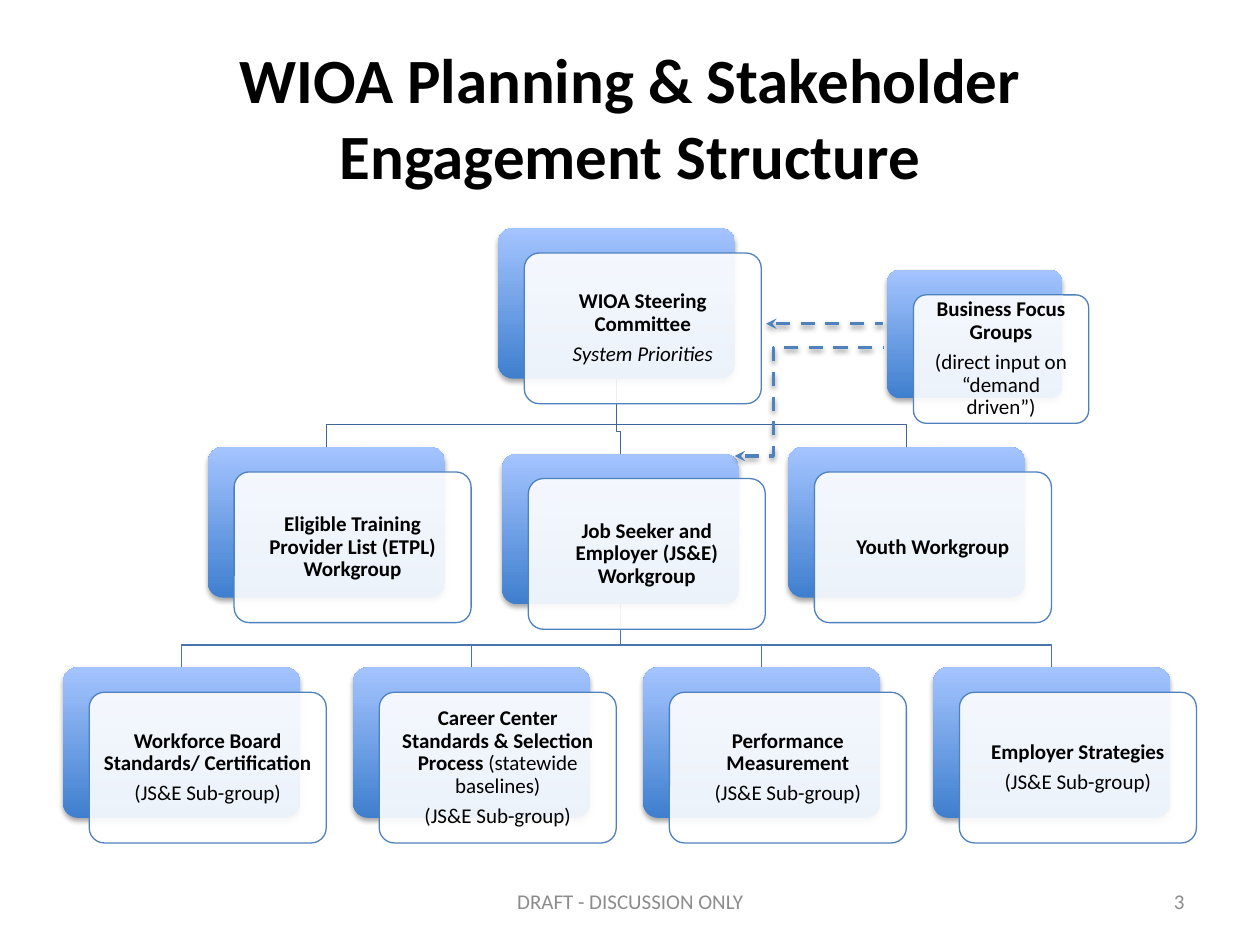
"""Build the WIOA planning and stakeholder engagement structure slide."""
import pptx
import pptx.dml.color
import pptx.enum.dml
import pptx.enum.shapes
import pptx.enum.text
import pptx.oxml
import pptx.oxml.ns
import pptx.util

Pt = pptx.util.Pt
RGBColor = pptx.dml.color.RGBColor
ALIGN = pptx.enum.text.PP_ALIGN
SHAPE = pptx.enum.shapes.MSO_SHAPE
CONNECTOR = pptx.enum.shapes.MSO_CONNECTOR
NAMESPACE = pptx.oxml.ns.nsdecls("a")

BLACK = RGBColor(0x00, 0x00, 0x00)
WHITE = RGBColor(0xFF, 0xFF, 0xFF)
GRAY = RGBColor(0x8C, 0x8C, 0x8C)
BLUE = RGBColor(0x4F, 0x81, 0xBD)
DEEP_BLUE = RGBColor(0x3F, 0x7F, 0xCE)
PALE_BLUE = RGBColor(0xA4, 0xC4, 0xFF)
UPPER_BRANCH = RGBColor(0x3F, 0x67, 0x97)
LOWER_BRANCH = RGBColor(0x48, 0x75, 0xAC)

FONT = "Calibri"
CARD_SIZE = (135.4, 86.1)
FOCUS_SIZE = (100.1, 73.4)
CARD_SHIFT = (15, 14.3)
CORNER_RADIUS = 0.1
BRANCH_DROP = 12.6

STEERING = (352.5, 130.3)
JOB_SEEKER = (354.6, 259.2)
FOCUS_GROUPS = (507, 154.2)
WORKGROUP_TOP = 255.4
SUBGROUP_LEFT, SUBGROUP_TOP, SUBGROUP_STEP = 36, 381.3, 165.75

SUBGROUP_NOTE = [("(JS&E Sub-group)", "")]
SUBGROUPS = [
    [[("Workforce Board Standards/ Certification", "b")], SUBGROUP_NOTE],
    [[("Career Center Standards & Selection Process ", "b"),
      ("(statewide baselines)", "")], SUBGROUP_NOTE],
    [[("Performance Measurement", "b")], SUBGROUP_NOTE],
    [[("Employer Strategies", "b")], SUBGROUP_NOTE],
]


def format_run(run, size, color, style=""):
    """Apply font, size, colour and a style made of the letters b and i."""
    run.font.name = FONT
    run.font.size = Pt(size)
    run.font.color.rgb = color
    run.font.bold = "b" in style
    run.font.italic = "i" in style


def add_label(slide, box, text, size, color, alignment, style=""):
    """Add a single-paragraph text box."""
    frame = slide.shapes.add_textbox(*map(Pt, box)).text_frame
    frame.word_wrap = True
    frame.vertical_anchor = pptx.enum.text.MSO_ANCHOR.MIDDLE
    frame.text = text
    paragraph = frame.paragraphs[0]
    paragraph.alignment = alignment
    format_run(paragraph.runs[0], size, color, style)


def set_shadow(shape, distance, opacity):
    """Give a shape or connector a soft shadow straight below it."""
    properties = shape._element.spPr
    for effects in properties.findall(pptx.oxml.ns.qn("a:effectLst")):
        properties.remove(effects)
    properties.append(pptx.oxml.parse_xml(
        f'<a:effectLst {NAMESPACE}><a:outerShdw blurRad="{Pt(3.1)}" dist="{Pt(distance)}" '
        f'dir="5400000" rotWithShape="0"><a:srgbClr val="000000">'
        f'<a:alpha val="{opacity * 1000}"/></a:srgbClr></a:outerShdw></a:effectLst>'))


def add_rounded(slide, left, top, size):
    """Add a rounded rectangle with the corner radius shared by all cards."""
    shape = slide.shapes.add_shape(
        SHAPE.ROUNDED_RECTANGLE, Pt(left), Pt(top), *map(Pt, size))
    shape.adjustments[0] = CORNER_RADIUS
    shape.shadow.inherit = False
    return shape


def write_card(shape, paragraphs):
    """Write centred paragraphs, each a list of (text, style) runs."""
    frame = shape.text_frame
    frame.word_wrap = True
    frame.vertical_anchor = pptx.enum.text.MSO_ANCHOR.MIDDLE
    frame.margin_left = frame.margin_right = Pt(5.8)
    frame.margin_top = frame.margin_bottom = Pt(5.8)
    for index, runs in enumerate(paragraphs):
        paragraph = frame.add_paragraph() if index else frame.paragraphs[0]
        paragraph.alignment = ALIGN.CENTER
        paragraph.line_spacing = 0.9
        paragraph.space_after = Pt(4.2)
        for text, style in runs:
            run = paragraph.add_run()
            run.text = text
            format_run(run, 12, BLACK, style)


def add_card(slide, position, paragraphs, size=CARD_SIZE):
    """Add a gradient back plate with a translucent text card over it."""
    left, top = position
    plate = add_rounded(slide, left, top, size)
    plate.fill.gradient()
    plate.fill.gradient_angle = 90
    for stop, color, place in zip(
            plate.fill.gradient_stops, (DEEP_BLUE, PALE_BLUE), (0, 1)):
        stop.color.rgb = color
        stop.position = place
    plate.line.fill.background()
    set_shadow(plate, 1.8, 35)

    card = add_rounded(slide, left + CARD_SHIFT[0], top + CARD_SHIFT[1], size)
    card.fill.solid()
    card.fill.fore_color.rgb = WHITE
    color = card._element.spPr.find(".//" + pptx.oxml.ns.qn("a:srgbClr"))
    color.append(pptx.oxml.parse_xml(f'<a:alpha {NAMESPACE} val="90000"/>'))
    card.line.color.rgb = BLUE
    card.line.width = Pt(0.75)
    write_card(card, paragraphs)


def add_branch(slide, parent, child, color):
    """Join the bottom of a parent plate to the top of a child plate."""
    width, height = CARD_SIZE
    start_x, start_y = parent[0] + width / 2, parent[1] + height
    end_x, end_y = child[0] + width / 2, child[1]
    bend_y = end_y - BRANCH_DROP
    builder = slide.shapes.build_freeform(Pt(start_x), Pt(start_y))
    corners = [(start_x, bend_y), (end_x, bend_y), (end_x, end_y)]
    builder.add_line_segments([(Pt(x), Pt(y)) for x, y in corners], close=False)
    branch = builder.convert_to_shape()
    branch.shadow.inherit = False
    branch.fill.background()
    branch.line.color.rgb = color
    branch.line.width = Pt(0.75)


def add_input_arrow(slide, kind, start, end, bend=None):
    """Add a dashed connector with its arrowhead at the start."""
    arrow = slide.shapes.add_connector(kind, *map(Pt, start + end))
    arrow.line.color.rgb = BLUE
    arrow.line.width = Pt(2)
    arrow.line.dash_style = pptx.enum.dml.MSO_LINE.DASH
    arrow.line._get_or_add_ln().append(
        pptx.oxml.parse_xml(f'<a:headEnd {NAMESPACE} type="stealth"/>'))
    set_shadow(arrow, 1.6, 38)
    if bend is not None:
        geometry = arrow._element.spPr.find(pptx.oxml.ns.qn("a:prstGeom"))
        for child in list(geometry):
            geometry.remove(child)
        geometry.append(pptx.oxml.parse_xml(
            f'<a:avLst {NAMESPACE}><a:gd name="adj1" fmla="val {round(bend * 100000)}"/></a:avLst>'))


def main():
    """Build and save the slide."""
    presentation = pptx.Presentation()
    presentation.slide_width, presentation.slide_height = Pt(720), Pt(540)
    slide = presentation.slides.add_slide(presentation.slide_layouts[6])
    add_label(slide, (36, 21.6, 648, 90),
              "WIOA Planning & Stakeholder Engagement Structure",
              36, BLACK, ALIGN.CENTER, "b")

    training, youth = (118.8, WORKGROUP_TOP), (450.4, WORKGROUP_TOP)
    subgroups = [(SUBGROUP_LEFT + column * SUBGROUP_STEP, SUBGROUP_TOP)
                 for column in range(len(SUBGROUPS))]
    steering = (284.6, STEERING[1])
    job_seeker = (286.9, JOB_SEEKER[1])
    for workgroup in (training, job_seeker, youth):
        add_branch(slide, steering, workgroup, UPPER_BRANCH)
    for subgroup in subgroups:
        add_branch(slide, job_seeker, subgroup, LOWER_BRANCH)

    add_card(slide, steering, [[("WIOA Steering Committee", "b")],
                               [("System Priorities", "i")]])
    add_card(slide, training,
             [[("Eligible Training Provider List (ETPL) Workgroup", "b")]])
    add_card(slide, job_seeker,
             [[("Job Seeker and Employer (JS&E) Workgroup", "b")]])
    add_card(slide, youth, [[("Youth Workgroup", "b")]])
    for position, paragraphs in zip(subgroups, SUBGROUPS):
        add_card(slide, position, paragraphs)
    add_card(slide, FOCUS_GROUPS,
             [[("Business Focus Groups", "b")],
              [("(direct input on “demand driven”)", "")]], FOCUS_SIZE)

    add_input_arrow(slide, CONNECTOR.ELBOW, (419.8, 260.6), (504.7, 198.7), 0.26)
    add_input_arrow(slide, CONNECTOR.STRAIGHT, (437.8, 185), (504.7, 185))
    add_label(slide, (246.2, 500.5, 228, 28.8), "DRAFT - DISCUSSION ONLY",
              12, GRAY, ALIGN.CENTER)
    add_label(slide, (516, 500.5, 168, 28.8), "3", 12, GRAY, ALIGN.RIGHT)
    presentation.save("out.pptx")


if __name__ == "__main__":
    main()
